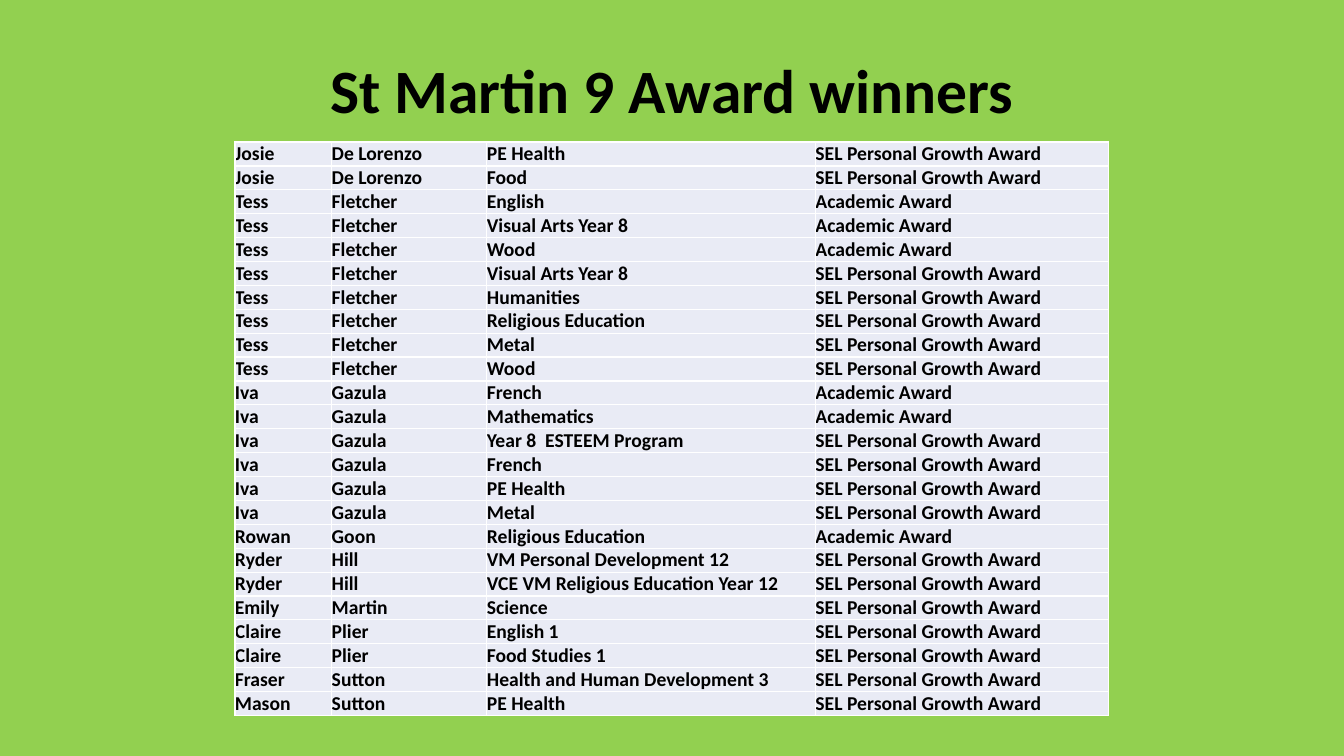
from lxml.etree import SubElement
from pptx import Presentation
from pptx.dml.color import RGBColor
from pptx.enum.text import MSO_ANCHOR as Anchor, MSO_AUTO_SIZE as AutoSize, PP_ALIGN as Align
from pptx.oxml.ns import qn
from pptx.util import Cm, Pt

FONT = "Calibri"
BLACK, WHITE, GREEN, LAVENDER = "000000", "FFFFFF", "92D050", "E9EBF5"
COLUMN_WIDTHS = [2.44, 3.91, 8.28, 7.39]
ROW_HEIGHT = 0.6
GROWTH = "SEL Personal Growth Award"
ACADEMIC = "Academic Award"

WINNERS = [
    ("Josie", "De Lorenzo", "PE Health", GROWTH),
    ("Josie", "De Lorenzo", "Food", GROWTH),
    ("Tess", "Fletcher", "English", ACADEMIC),
    ("Tess", "Fletcher", "Visual Arts Year 8", ACADEMIC),
    ("Tess", "Fletcher", "Wood", ACADEMIC),
    ("Tess", "Fletcher", "Visual Arts Year 8", GROWTH),
    ("Tess", "Fletcher", "Humanities", GROWTH),
    ("Tess", "Fletcher", "Religious Education", GROWTH),
    ("Tess", "Fletcher", "Metal", GROWTH),
    ("Tess", "Fletcher", "Wood", GROWTH),
    ("Iva", "Gazula", "French", ACADEMIC),
    ("Iva", "Gazula", "Mathematics", ACADEMIC),
    ("Iva", "Gazula", "Year 8  ESTEEM Program", GROWTH),
    ("Iva", "Gazula", "French", GROWTH),
    ("Iva", "Gazula", "PE Health", GROWTH),
    ("Iva", "Gazula", "Metal", GROWTH),
    ("Rowan", "Goon", "Religious Education", ACADEMIC),
    ("Ryder", "Hill", "VM Personal Development 12", GROWTH),
    ("Ryder", "Hill", "VCE VM Religious Education Year 12", GROWTH),
    ("Emily", "Martin", "Science", GROWTH),
    ("Claire", "Plier", "English 1", GROWTH),
    ("Claire", "Plier", "Food Studies 1", GROWTH),
    ("Fraser", "Sutton", "Health and Human Development 3", GROWTH),
    ("Mason", "Sutton", "PE Health", GROWTH),
]


def paint(fill, color):
    fill.solid()
    fill.fore_color.rgb = RGBColor.from_string(color)


def add_span(para, text, size):
    span = para.add_run()
    span.text = text
    span.font.name = FONT
    span.font.size = Pt(size)
    span.font.bold = True
    paint(span.font.fill, BLACK)


def set_title(page, text):
    box = page.shapes.title
    box.left, box.top, box.width, box.height = Cm(7.7), Cm(1.09), Cm(18.49), Cm(2.51)
    frame = box.text_frame
    frame.word_wrap = True
    frame.auto_size = AutoSize.NONE
    frame.vertical_anchor = Anchor.MIDDLE
    para = frame.paragraphs[0]
    para.alignment = Align.CENTER
    para.line_spacing = 0.9
    add_span(para, text, 44)


def add_borders(cell, color, width):
    properties = cell._tc.get_or_add_tcPr()
    for side in ("a:lnL", "a:lnR", "a:lnT", "a:lnB"):
        line = SubElement(properties, qn(side), w=str(Pt(width)))
        fill = SubElement(line, qn("a:solidFill"))
        SubElement(fill, qn("a:srgbClr"), val=color)


def fill_cell(cell, text):
    cell.margin_left = cell.margin_right = cell.margin_top = cell.margin_bottom = 0
    cell.vertical_anchor = Anchor.BOTTOM
    add_borders(cell, WHITE, 1)
    paint(cell.fill, LAVENDER)
    add_span(cell.text_frame.paragraphs[0], text, 14)


def add_winners_table(page, winners):
    frame = page.shapes.add_table(
        len(winners), len(COLUMN_WIDTHS), Cm(5.92), Cm(3.58),
        Cm(sum(COLUMN_WIDTHS)), Cm(ROW_HEIGHT * len(winners)))
    table = frame.table
    table.first_row = table.horz_banding = False
    for column, width in zip(table.columns, COLUMN_WIDTHS):
        column.width = Cm(width)
    for row, winner in zip(table.rows, winners):
        row.height = Cm(ROW_HEIGHT)
        for cell, text in zip(row.cells, winner):
            fill_cell(cell, text)


def main():
    deck = Presentation()
    deck.slide_width, deck.slide_height = Cm(33.87), Cm(19.05)
    page = deck.slides.add_slide(deck.slide_layouts.get_by_name("Title Only"))
    paint(page.background.fill, GREEN)
    set_title(page, "St Martin 9 Award winners")
    add_winners_table(page, WINNERS)
    deck.save("out.pptx")


if __name__ == "__main__":
    main()
